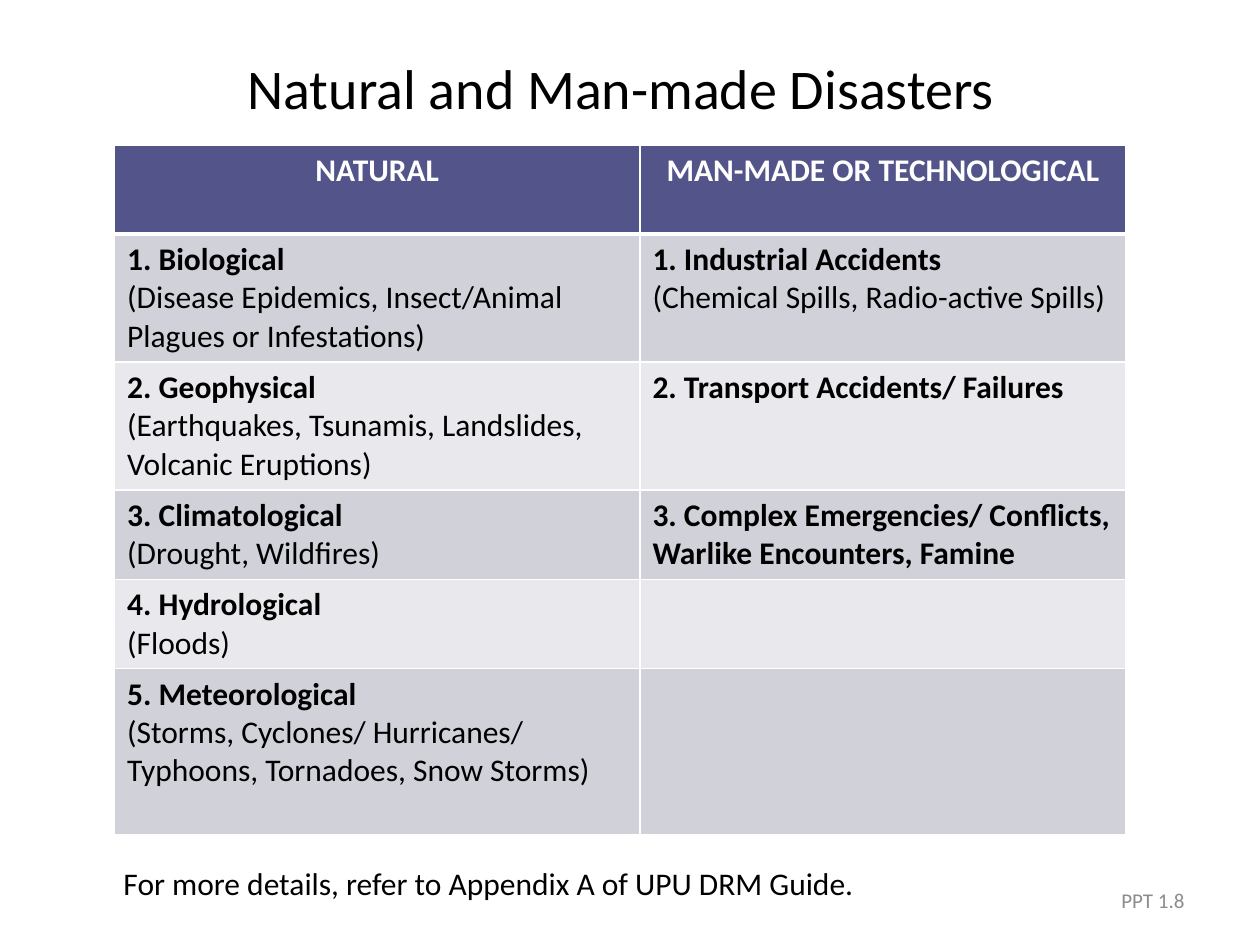
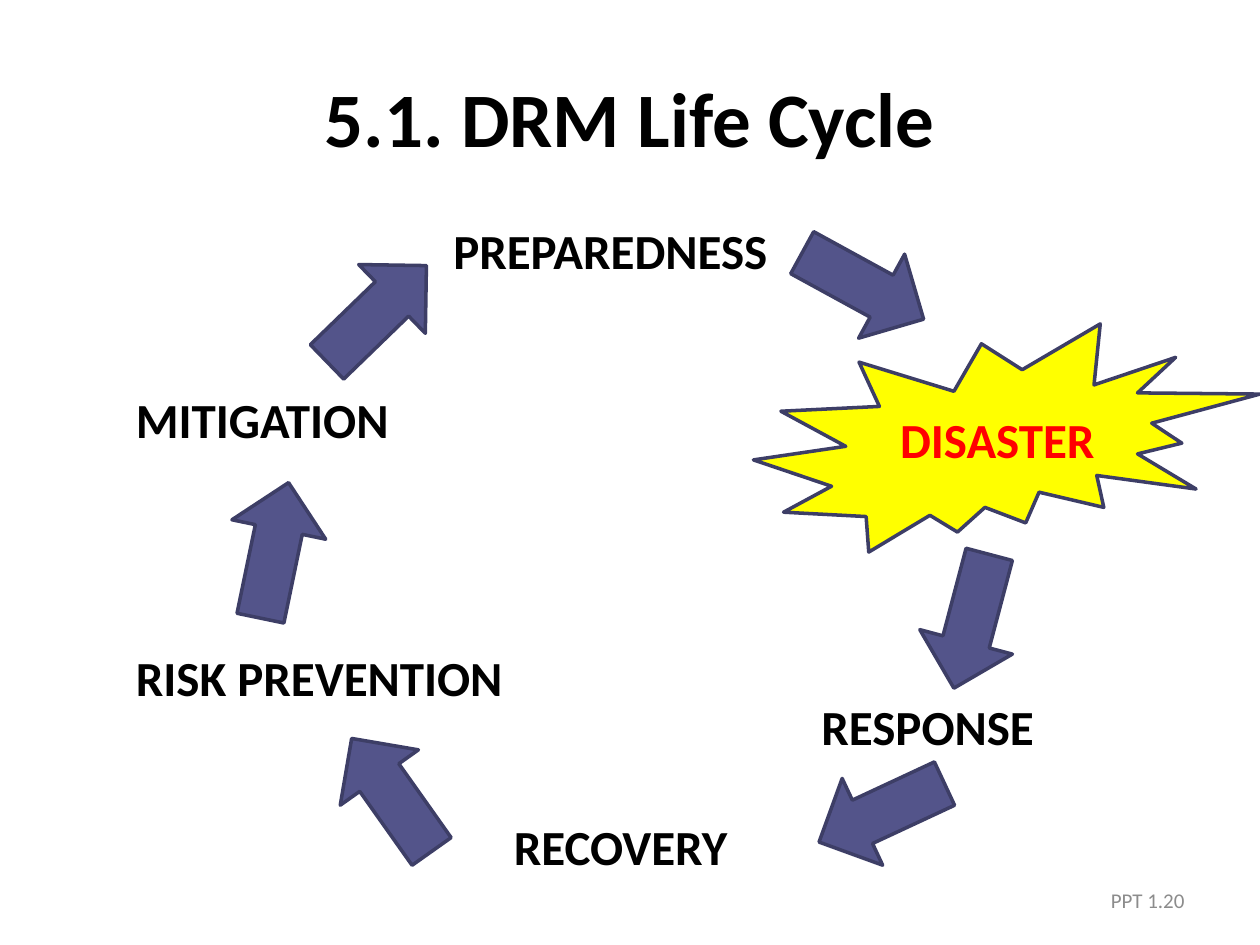
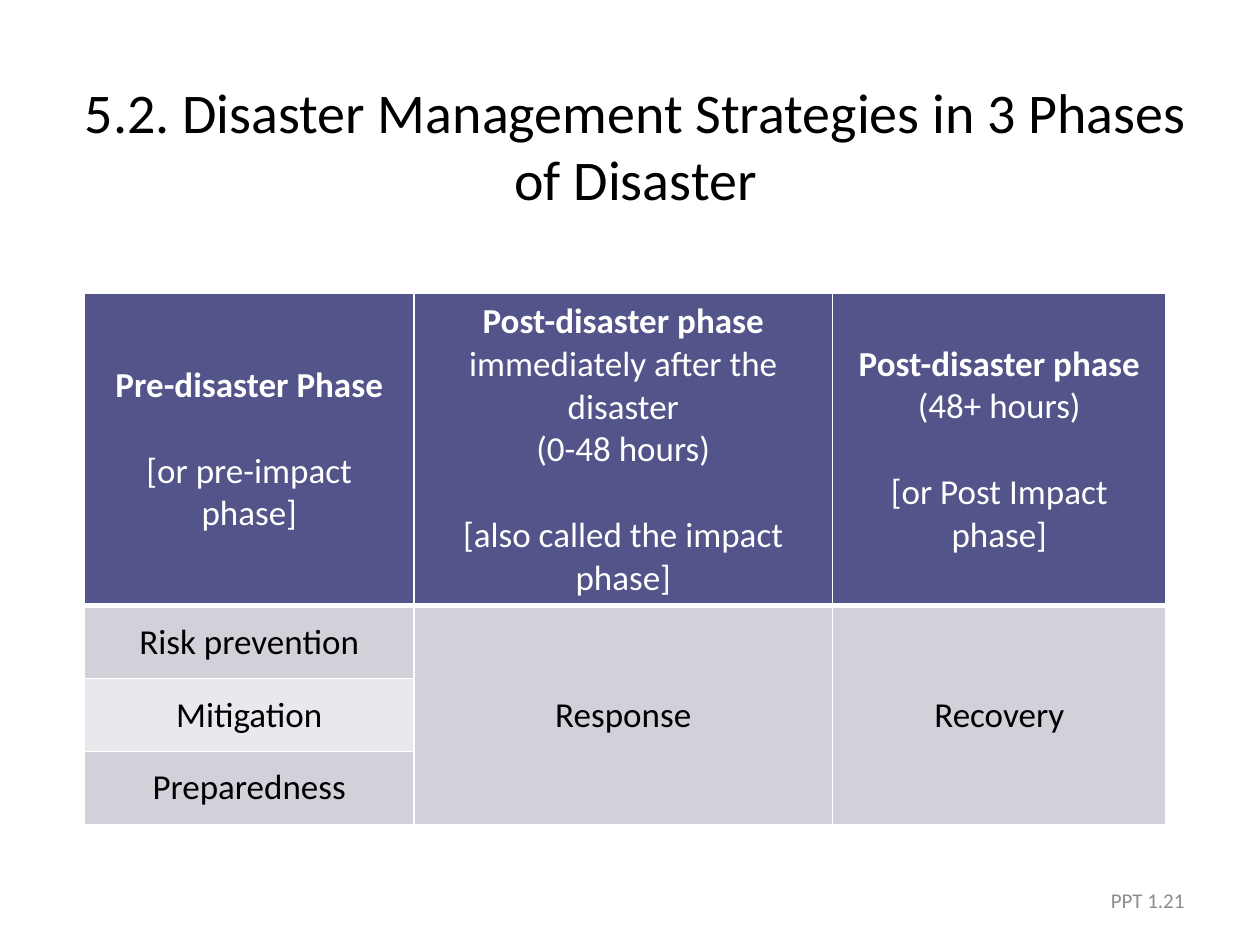
"""Build three slides on disaster types, the DRM life cycle and disaster phases."""
import pptx
import pptx.dml.color
import pptx.enum.shapes
import pptx.enum.text
import pptx.oxml
import pptx.oxml.ns
import pptx.util

Cm = pptx.util.Cm
Pt = pptx.util.Pt
RGBColor = pptx.dml.color.RGBColor
Align = pptx.enum.text.PP_ALIGN
Anchor = pptx.enum.text.MSO_ANCHOR
Preset = pptx.enum.shapes.MSO_SHAPE

FONT = "Calibri"
BLACK = RGBColor(0x00, 0x00, 0x00)
WHITE = RGBColor(0xFF, 0xFF, 0xFF)
GREY = RGBColor(0x8C, 0x8C, 0x8C)
INDIGO = RGBColor(0x53, 0x54, 0x8A)
OUTLINE = RGBColor(0x3D, 0x3E, 0x66)
DARK_BAND = RGBColor(0xD1, 0xD1, 0xDA)
LIGHT_BAND = RGBColor(0xE9, 0xE9, 0xED)
YELLOW = RGBColor(0xFF, 0xFF, 0x00)
RED = RGBColor(0xFF, 0x00, 0x00)

LABEL_HEIGHT = 1.45
ARROW_SIZE = (2.79, 1.93)
LINE_GAP = 24.4


class Page:
    """Hold the shared style and the current slide."""

    def __init__(self, deck, number):
        self.slide = deck.slides.add_slide(deck.slide_layouts[5])
        self.shapes = self.slide.shapes
        self.text(f"PPT {number}", (18.21, 17.65, 5.92, 1.01), 12, color=GREY,
                  align=Align.RIGHT, anchor=Anchor.MIDDLE)

    def style(self, para, size, color=BLACK, bold=False, align=Align.LEFT):
        para.alignment = align
        para.font.name = FONT
        para.font.size = Pt(size)
        para.font.bold = bold
        para.font.color.rgb = color

    def title(self, text, place, size=32, bold=False):
        title = self.shapes.title
        title.left, title.top, title.width, title.height = map(Cm, place)
        frame = title.text_frame
        frame.text = text
        frame.word_wrap = True
        frame.auto_size = pptx.enum.text.MSO_AUTO_SIZE.NONE
        frame.vertical_anchor = Anchor.MIDDLE
        self.style(frame.paragraphs[0], size, bold=bold, align=Align.CENTER)

    def text(self, text, place, size, color=BLACK, bold=False,
             align=Align.LEFT, anchor=Anchor.TOP):
        frame = self.shapes.add_textbox(*map(Cm, place)).text_frame
        frame.word_wrap = True
        frame.vertical_anchor = anchor
        frame.text = text
        self.style(frame.paragraphs[0], size, color, bold, align)

    def label(self, text, left, top, width, color=BLACK, align=Align.LEFT):
        self.text(text, (left, top, width, LABEL_HEIGHT), 28, color, True, align)

    def shape(self, preset, place, fill, rotation=0):
        shape = self.shapes.add_shape(preset, *map(Cm, place))
        shape.shadow.inherit = False
        shape.rotation = rotation
        shape.fill.solid()
        shape.fill.fore_color.rgb = fill
        shape.line.color.rgb = OUTLINE
        shape.line.width = Pt(2)

    def border(self, cell, bottom):
        properties = cell._tc.get_or_add_tcPr()
        for side, width in (("L", 1), ("R", 1), ("T", 1), ("B", bottom)):
            properties.append(pptx.oxml.parse_xml(
                f'<a:ln{side} {pptx.oxml.ns.nsdecls("a")} w="{Pt(width)}">'
                f'<a:solidFill><a:srgbClr val="{WHITE}"/></a:solidFill></a:ln{side}>'))

    def cell_text(self, cell, lines, size, color, align):
        frame = cell.text_frame
        for index, (strong, plain, gap) in enumerate(lines):
            para = frame.add_paragraph() if index else frame.paragraphs[0]
            self.style(para, size, color, not plain, align)
            para.space_before = Pt(gap)
            for text, bold in ((strong, True), (plain, False)):
                if text:
                    span = para.add_run()
                    span.text = text
                    if strong and plain:
                        span.font.bold = bold
                    elif plain:
                        para.font.bold = False

    def table(self, corner, widths, heights, rows, size, align, anchor):
        frame = self.shapes.add_table(len(heights), len(widths), *map(Cm, corner),
                                      Cm(sum(widths)), Cm(sum(heights)))
        table = frame.table
        for column, width in zip(table.columns, widths):
            column.width = Cm(width)
        for row, height in zip(table.rows, heights):
            row.height = Cm(height)
        for r, row in enumerate(rows):
            header = r == 0
            band = INDIGO if header else DARK_BAND if r % 2 else LIGHT_BAND
            for c, lines in enumerate(row):
                cell = table.cell(r, c)
                self.border(cell, 3 if header else 1)
                cell.fill.solid()
                cell.fill.fore_color.rgb = band
                cell.vertical_anchor = anchor
                self.cell_text(cell, lines, size, WHITE if header else BLACK,
                               Align.CENTER if header else align)
        return table


def strong(text):
    return (text, "", 0)


def plain(text, gap=0):
    return ("", text, gap)


def disaster_types(deck):
    page = Page(deck, "1.8")
    page.title("Natural and Man-made Disasters", (1.09, 0.16, 22.86, 3.18))
    rows = [
        ([strong("NATURAL")], [strong("MAN-MADE OR TECHNOLOGICAL")]),
        ([strong("1. Biological"),
          plain("(Disease Epidemics, Insect/Animal Plagues or Infestations)")],
         [strong("1. Industrial Accidents"),
          plain("(Chemical Spills, Radio-active Spills)")]),
        ([strong("2. Geophysical"),
          plain("(Earthquakes, Tsunamis, Landslides, Volcanic Eruptions)")],
         [strong("2. Transport Accidents/ Failures")]),
        ([strong("3. Climatological"), plain("(Drought, Wildfires)")],
         [strong("3. Complex Emergencies/ Conflicts, Warlike Encounters, Famine")]),
        ([strong("4. Hydrological"), plain("(Floods)")], []),
        ([strong("5. Meteorological"),
          plain("(Storms, Cyclones/ Hurricanes/ Typhoons, Tornadoes, Snow Storms)")], []),
    ]
    page.table((2.31, 2.92), (10.59, 9.8), (1.8, 2.58, 2.58, 1.8, 1.8, 3.35),
               rows, 18, Align.LEFT, Anchor.TOP)
    page.text("For more details, refer to Appendix A of UPU DRM Guide.",
              (2.24, 17.3, 22.86, 1.02), 18)


def life_cycle(deck):
    page = Page(deck, "1.20")
    page.title("5.1. DRM Life Cycle", (1.27, 0.76, 22.86, 3.18), 44, True)
    for stage, left, top, width in (
            ("PREPAREDNESS", 8.89, 4.32, 8), ("RESPONSE", 16.31, 13.92, 6.4),
            ("RECOVERY", 10.11, 16.33, 6), ("RISK PREVENTION", 2.49, 12.93, 9),
            ("MITIGATION", 2.49, 7.72, 8.2)):
        page.label(stage, left, top, width)
    for left, top, rotation in (
            (16, 4.8, 28.7), (18.19, 11.56, 104.8), (16.38, 15.42, 155),
            (6.5, 15.06, 234.7), (4.14, 10.13, 281.7), (6.2, 5.36, 315.9)):
        page.shape(Preset.RIGHT_ARROW, (left, top, *ARROW_SIZE), INDIGO, rotation)
    page.shape(Preset.EXPLOSION2, (15.19, 6.53, 10.21, 4.6), YELLOW)
    page.label("DISASTER", 17.5, 8.13, 5.21, RED, Align.CENTER)


def disaster_phases(deck):
    page = Page(deck, "1.21")
    page.title("5.2. Disaster Management Strategies in 3 Phases of Disaster",
               (0.89, 1.32, 23.85, 3.18))
    rows = [
        ([strong("Pre-disaster Phase"), plain("[or pre-impact phase]", LINE_GAP)],
         [("Post-disaster phase ", "immediately after the disaster", 0),
          plain("(0-48 hours)"), plain("[also called the impact phase]", LINE_GAP)],
         [strong("Post-disaster phase"), plain("(48+ hours)"),
          plain("[or Post Impact phase]", LINE_GAP)]),
        ([plain("Risk prevention")], [plain("Response")], [plain("Recovery")]),
        ([plain("Mitigation")], [], []),
        ([plain("Preparedness")], [], []),
    ]
    table = page.table((1.7, 5.92), (6.65, 8.43, 6.73), (6.29, 1.47, 1.47, 1.47),
                       rows, 20, Align.CENTER, Anchor.MIDDLE)
    for column in (1, 2):
        table.cell(1, column).merge(table.cell(3, column))


def main():
    deck = pptx.Presentation()
    deck.slide_width, deck.slide_height = Cm(25.4), Cm(19.05)
    disaster_types(deck)
    life_cycle(deck)
    disaster_phases(deck)
    deck.save("out.pptx")


if __name__ == "__main__":
    main()
